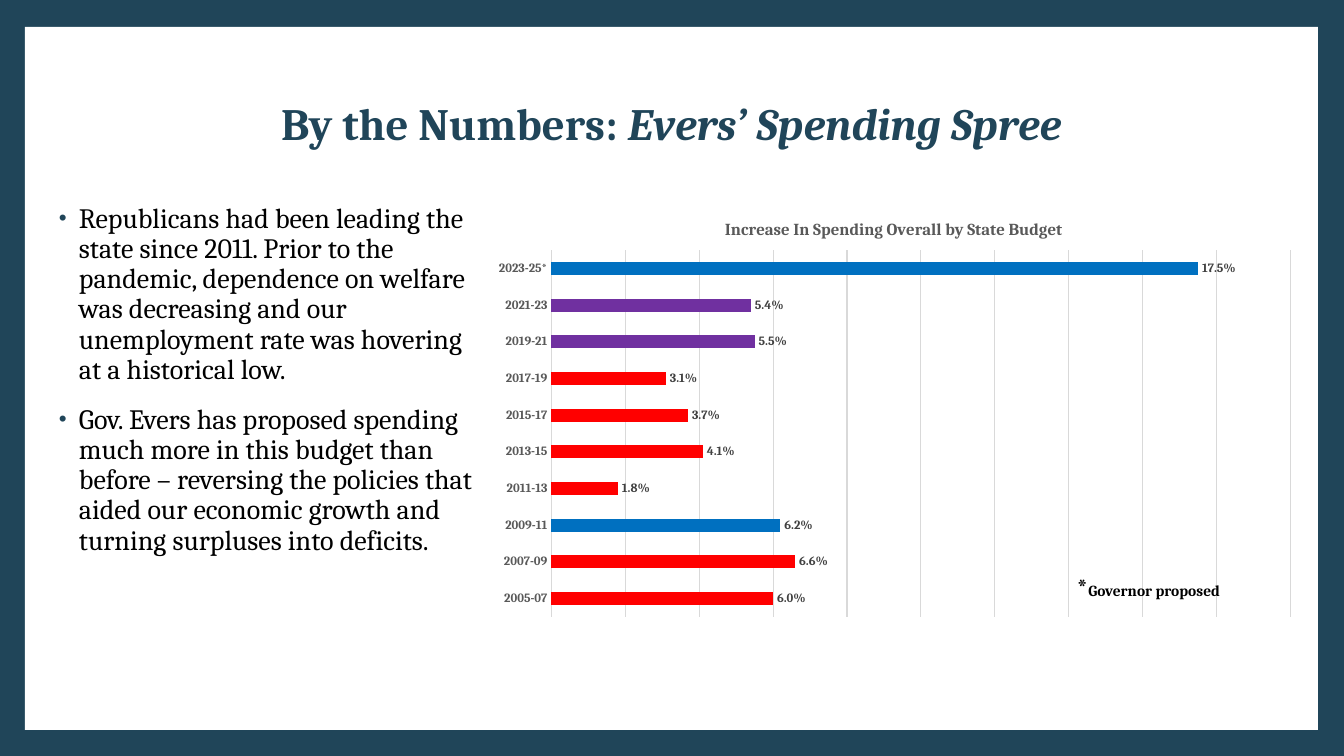
from lxml import etree
from pptx import Presentation
from pptx import util as u
from pptx.chart.data import CategoryChartData
from pptx.dml.color import RGBColor
from pptx.enum import chart as ch, shapes, text
from pptx.oxml import ns

EMU_PER_PX = 914400 / 100.8
NAVY = RGBColor(0x20, 0x45, 0x59)
WHITE = RGBColor(0xFF, 0xFF, 0xFF)
BLACK = RGBColor(0, 0, 0)
RED = RGBColor(0xFF, 0, 0)
BLUE = RGBColor(0x00, 0x70, 0xC0)
PURPLE = RGBColor(0x70, 0x30, 0xA0)
GRID_GRAY = RGBColor(0xD9, 0xD9, 0xD9)
AXIS_GRAY = RGBColor(0x59, 0x59, 0x59)
LABEL_GRAY = RGBColor(0x40, 0x40, 0x40)
SERIF = "Cambria"

BULLETS = [
    "Republicans had been leading the state since 2011. Prior to the pandemic, "
    "dependence on welfare was decreasing and our unemployment rate was hovering "
    "at a historical low.",
    "Gov. Evers has proposed spending much more in this budget than before – "
    "reversing the policies that aided our economic growth and turning surpluses "
    "into deficits.",
]
BUDGETS = [
    ("2005-07", 0.06, RED), ("2007-09", 0.066, RED), ("2009-11", 0.062, BLUE),
    ("2011-13", 0.018, RED), ("2013-15", 0.041, RED), ("2015-17", 0.037, RED),
    ("2017-19", 0.031, RED), ("2019-21", 0.055, PURPLE),
    ("2021-23", 0.054, PURPLE), ("2023-25*", 0.175, BLUE),
]


def px(length):
    """Turn px into EMU."""
    return u.Emu(round(length * EMU_PER_PX))


def style(font, size, color, bold=False, italic=False):
    """Format a font in the slide's serif face."""
    font.name, font.size, font.bold, font.italic = SERIF, u.Pt(size), bold, italic
    font.color.rgb = color


def add_frame(slide, left, top, width, height):
    """Add a wrapping text box and return its text frame."""
    box = slide.shapes.add_textbox(px(left), px(top), px(width), px(height))
    box.text_frame.word_wrap = True
    return box.text_frame


def add_runs(paragraph, color, *pieces):
    """Add bold runs given as (wording, size, italic)."""
    for wording, size, italic in pieces:
        run = paragraph.add_run()
        run.text = wording
        style(run.font, size, color, True, italic)


def add_panel(slide):
    """Add the white panel inside the navy border."""
    panel = slide.shapes.add_shape(
        shapes.MSO_SHAPE.RECTANGLE, px(25), px(27), px(1293), px(703))
    panel.shadow.inherit = False
    panel.fill.solid()
    panel.fill.fore_color.rgb = WHITE
    panel.line.fill.background()


def add_heading(slide):
    """Add the centred slide heading."""
    frame = add_frame(slide, 167, 53, 1009, 145)
    frame.vertical_anchor = text.MSO_ANCHOR.MIDDLE
    heading = frame.paragraphs[0]
    heading.alignment = text.PP_ALIGN.CENTER
    heading.line_spacing = 0.9
    add_runs(heading, NAVY, ("By the Numbers: ", 32, False),
             ("Evers’ Spending Spree", 32, True))


def add_bullets(slide):
    """Add the bulleted commentary."""
    frame = add_frame(slide, 44, 199, 440, 508)
    for index, wording in enumerate(BULLETS):
        point = frame.add_paragraph() if index else frame.paragraphs[0]
        point.text = wording
        point.line_spacing = 0.9
        if index:
            point.space_before = u.Pt(14)
        props = point._p.get_or_add_pPr()
        props.set("marL", str(px(25)))
        props.set("indent", str(-px(20)))
        bullet_color = etree.SubElement(props, ns.qn("a:buClr"))
        etree.SubElement(bullet_color, ns.qn("a:srgbClr"), val=str(NAVY))
        etree.SubElement(props, ns.qn("a:buSzPct"), val="80000")
        etree.SubElement(props, ns.qn("a:buFont"), typeface="Arial")
        etree.SubElement(props, ns.qn("a:buChar"), char="•")
        style(point.runs[0].font, 20, BLACK)


def make_layout(inner=False, **fractions):
    """Make a manual layout from fractions of the chart."""
    layout = etree.Element(ns.qn("c:layout"))
    manual = etree.SubElement(layout, ns.qn("c:manualLayout"))
    if inner:
        etree.SubElement(manual, ns.qn("c:layoutTarget"), val="inner")
    for mode in ("xMode", "yMode"):
        etree.SubElement(manual, ns.qn("c:" + mode), val="edge")
    for side, fraction in fractions.items():
        etree.SubElement(manual, ns.qn("c:" + side), val=str(fraction))
    return layout


def place(parent, position, layout):
    """Put a layout in a chart part, in place of any other."""
    for old in parent.findall(ns.qn("c:layout")):
        parent.remove(old)
    parent.insert(position, layout)


def format_axes(chart):
    """Format the budget axis and the hidden spending axis."""
    budgets, spending = chart.category_axis, chart.value_axis
    budgets.major_tick_mark = ch.XL_TICK_MARK.NONE
    style(budgets.tick_labels.font, 9, AXIS_GRAY, True)
    spending.visible = False
    spending.has_major_gridlines = True
    spending.minimum_scale, spending.maximum_scale = 0, 0.2
    spending.major_unit = 0.02
    for line in (budgets.format.line, spending.major_gridlines.format.line):
        line.color.rgb = GRID_GRAY
        line.width = u.Pt(0.75)


def add_spending_chart(slide):
    """Add the bar chart of spending increases."""
    names, increases, colors = zip(*BUDGETS)
    data = CategoryChartData(number_format="0.0%")
    data.categories = names
    data.add_series("Series 1", increases)
    chart = slide.shapes.add_chart(
        ch.XL_CHART_TYPE.BAR_CLUSTERED, px(483), px(199), px(824), px(426), data).chart
    chart.has_legend = False
    chart.font.name, chart.font.size = "Cabin", u.Pt(10)
    chart.font.color.rgb = BLACK
    title = chart.chart_title
    title.text_frame.text = "Increase In Spending Overall by State Budget"
    style(title.text_frame.paragraphs[0].runs[0].font, 12, AXIS_GRAY, True)
    place(title._element, 1, make_layout(x=0.29, y=0.04))
    place(chart._chartSpace.chart.plotArea, 0,
          make_layout(True, x=0.083, y=0.12, w=0.897, h=0.861))
    format_axes(chart)
    plot = chart.plots[0]
    plot.gap_width = 182
    plot.vary_by_categories = False
    series = plot.series[0]
    series.invert_if_negative = False
    series.format.fill.solid()
    series.format.fill.fore_color.rgb = RED
    for index, color in enumerate(colors):
        if color != RED:
            fill = series.points[index].format.fill
            fill.solid()
            fill.fore_color.rgb = color
    labels = series.data_labels
    labels.show_value = True
    labels.number_format, labels.number_format_is_linked = "0.0%", False
    labels.position = ch.XL_LABEL_POSITION.OUTSIDE_END
    style(labels.font, 9, LABEL_GRAY, True)


def add_footnote(slide):
    """Add the note that explains the asterisk."""
    note = add_frame(slide, 1067, 566, 217, 40).paragraphs[0]
    add_runs(note, BLACK, ("*", 18, False), ("Governor proposed", 11, False))


def main():
    """Build and save the slide."""
    deck = Presentation()
    deck.slide_width, deck.slide_height = px(1344), px(756)
    slide = deck.slides.add_slide(deck.slide_layouts[6])
    slide.background.fill.solid()
    slide.background.fill.fore_color.rgb = NAVY
    add_panel(slide)
    add_heading(slide)
    add_bullets(slide)
    add_spending_chart(slide)
    add_footnote(slide)
    deck.save("out.pptx")


if __name__ == "__main__":
    main()
